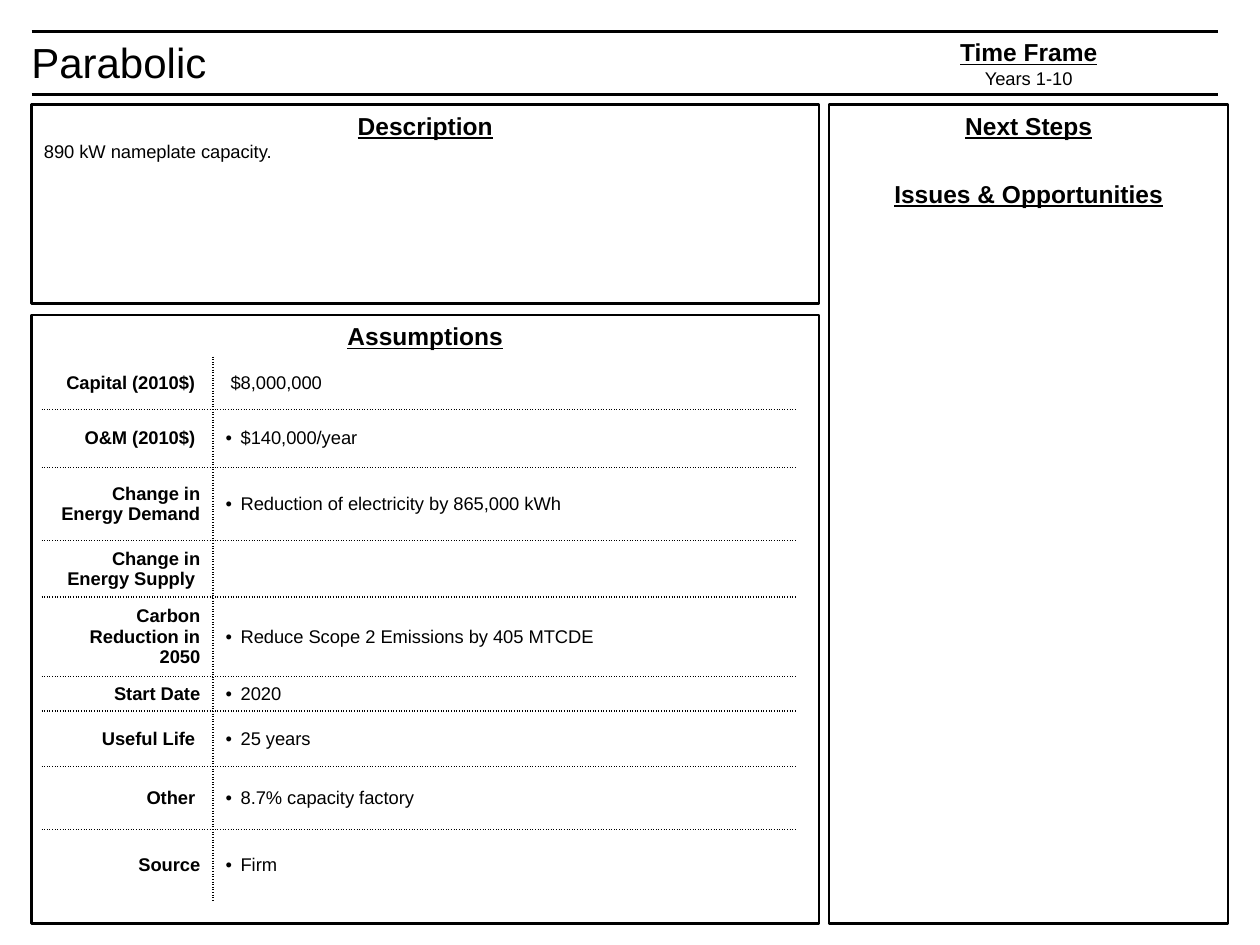
"""Build the Parabolic project summary slide."""
from dataclasses import dataclass
from lxml import etree
from pptx import Presentation
from pptx.dml.color import RGBColor
from pptx.enum.shapes import MSO_CONNECTOR, MSO_SHAPE
from pptx.enum.text import MSO_ANCHOR, PP_ALIGN
from pptx.oxml.ns import qn
from pptx.slide import Slide
from pptx.table import _Cell
from pptx.text.text import TextFrame, _Paragraph
from pptx.util import Pt

EMU_PER_PX = 9144
LEFT, CENTER, RIGHT = PP_ALIGN.LEFT, PP_ALIGN.CENTER, PP_ALIGN.RIGHT
TOP, MIDDLE = MSO_ANCHOR.TOP, MSO_ANCHOR.MIDDLE
STRAIGHT, RECTANGLE = MSO_CONNECTOR.STRAIGHT, MSO_SHAPE.RECTANGLE
BLACK = "000000"
LINE_WIDTH = 1.25
HEADING = {"size": Pt(14), "bold": True, "underline": True}
BODY = {"size": Pt(10.5), "bold": False}
LABEL = {"size": Pt(10.5), "bold": True}
TITLE = {"size": Pt(24)}


@dataclass(frozen=True)
class Line:
    """One paragraph and its format."""
    text: str
    format: dict
    align: PP_ALIGN = LEFT
    space_before: int = 0


@dataclass(frozen=True)
class Box:
    """An area in px with its lines of text."""
    left: int
    top: int
    width: int
    height: int
    lines: tuple[Line, ...]
    anchor: MSO_ANCHOR = TOP


@dataclass(frozen=True)
class Assumption:
    """One table row."""
    label: str
    value: str
    height: int
    bulleted: bool = True


PANELS = (
    Box(25, 83, 625, 158, (Line("Description", HEADING, CENTER),
                           Line("890 kW nameplate capacity.", BODY))),
    Box(25, 250, 625, 483, (Line("Assumptions", HEADING, CENTER),)),
    Box(658, 83, 317, 650, (Line("Next Steps", HEADING, CENTER),
                            Line("Issues & Opportunities", HEADING, CENTER, 22))),
)
HEADERS = (
    Box(15, 24, 161, 50, (Line("Parabolic", TITLE),)),
    Box(658, 25, 317, 50, (Line("Time Frame", HEADING, CENTER),
                           Line("Years 1-10", BODY, CENTER)), MIDDLE),
)
COLUMN_WIDTHS = (136, 464)
ASSUMPTIONS = (
    Assumption("Capital (2010$) ", " $8,000,000", 42, False),
    Assumption("O&M (2010$) ", "$140,000/year", 46),
    Assumption("Change in Energy Demand", "Reduction of electricity by 865,000 kWh", 58),
    Assumption("Change in Energy Supply ", "", 45, False),
    Assumption("Carbon Reduction in 2050", "Reduce Scope 2 Emissions by 405 MTCDE", 63),
    Assumption("Start Date", "2020", 27),
    Assumption("Useful Life ", "25 years", 44),
    Assumption("Other ", "8.7% capacity factory", 50),
    Assumption("Source", "Firm", 57),
)


def px(*lengths: int) -> list[int]:
    """Turn px lengths into EMU."""
    return [length * EMU_PER_PX for length in lengths]


def color(value: str) -> RGBColor:
    """Return the colour of a hex string."""
    return RGBColor.from_string(value)


def write_line(paragraph: _Paragraph, line: Line) -> None:
    """Write one formatted paragraph."""
    paragraph.alignment = line.align
    paragraph.space_before = Pt(line.space_before)
    font = paragraph.font
    if line.text:
        run = paragraph.add_run()
        run.text = line.text
        font = run.font
    for name, value in {"name": "Arial", **line.format}.items():
        setattr(font, name, value)
    font.color.rgb = color(BLACK)


def write_lines(frame: TextFrame, box: Box) -> None:
    """Write the lines of a box into its text frame."""
    frame.vertical_anchor = box.anchor
    for index, line in enumerate(box.lines):
        paragraph = frame.add_paragraph() if index else frame.paragraphs[0]
        write_line(paragraph, line)


def add_header(slide: Slide, box: Box) -> None:
    """Add an unwrapped text box."""
    shape = slide.shapes.add_textbox(*px(box.left, box.top, box.width, box.height))
    shape.text_frame.word_wrap = False
    write_lines(shape.text_frame, box)


def add_panel(slide: Slide, box: Box) -> None:
    """Add an outlined panel with its heading."""
    shape = slide.shapes.add_shape(
        RECTANGLE, *px(box.left, box.top, box.width, box.height))
    shape.shadow.inherit = False
    shape.fill.background()
    shape.line.color.rgb = color(BLACK)
    shape.line.width = Pt(LINE_WIDTH)
    shape.text_frame.word_wrap = True
    write_lines(shape.text_frame, box)


def add_rule(slide: Slide, left: int, right: int, top: int) -> None:
    """Add a horizontal rule."""
    rule = slide.shapes.add_connector(STRAIGHT, *px(left, top, right, top))
    rule.line.color.rgb = color(BLACK)
    rule.line.width = Pt(LINE_WIDTH)
    etree.SubElement(rule._element.spPr, qn("a:effectLst"))


def set_borders(cell: _Cell, dotted: dict[str, bool]) -> None:
    """Draw the chosen cell sides dotted and hide the others."""
    properties = cell._tc.get_or_add_tcPr()
    for index, (side, visible) in enumerate(dotted.items()):
        border = etree.Element(qn(f"a:ln{side}"), w=str(Pt(1)))
        properties.insert(index, border)
        if visible:
            fill = etree.SubElement(border, qn("a:solidFill"))
            etree.SubElement(fill, qn("a:srgbClr"), val=BLACK)
            etree.SubElement(border, qn("a:prstDash"), val="sysDot")
        else:
            etree.SubElement(border, qn("a:noFill"))


def add_bullet(paragraph: _Paragraph) -> None:
    """Give a paragraph a hanging bullet."""
    properties = paragraph._p.get_or_add_pPr()
    indent = px(12)[0]
    properties.set("marL", str(indent))
    properties.set("indent", str(-indent))
    etree.SubElement(properties, qn("a:buFont"), typeface="Arial")
    etree.SubElement(properties, qn("a:buChar"), char="•")


def add_assumptions(slide: Slide, left: int, top: int) -> None:
    """Add the table of assumptions."""
    height = sum(row.height for row in ASSUMPTIONS)
    table = slide.shapes.add_table(
        len(ASSUMPTIONS), len(COLUMN_WIDTHS),
        *px(left, top, sum(COLUMN_WIDTHS), height)).table
    table.first_row = table.horz_banding = False
    for column, width in zip(table.columns, px(*COLUMN_WIDTHS)):
        column.width = width
    last = len(ASSUMPTIONS) - 1
    for index, row in enumerate(ASSUMPTIONS):
        table.rows[index].height = px(row.height)[0]
        lines = (Line(row.label, LABEL, RIGHT), Line(row.value, BODY))
        for column, line in enumerate(lines):
            cell = table.cell(index, column)
            cell.vertical_anchor = MIDDLE
            cell.fill.background()
            set_borders(cell, {"L": column == 1, "R": column == 0,
                               "T": index > 0, "B": index < last})
            write_line(cell.text_frame.paragraphs[0], line)
        if row.bulleted:
            add_bullet(table.cell(index, 1).text_frame.paragraphs[0])


def main() -> None:
    """Build and save the presentation."""
    presentation = Presentation()
    presentation.slide_width, presentation.slide_height = px(1000, 750)
    slide = presentation.slides.add_slide(presentation.slide_layouts[6])
    for top in (25, 75):
        add_rule(slide, 25, 967, top)
    for header in HEADERS:
        add_header(slide, header)
    for panel in PANELS:
        add_panel(slide, panel)
    add_assumptions(slide, 33, 283)
    presentation.save("out.pptx")


if __name__ == "__main__":
    main()
